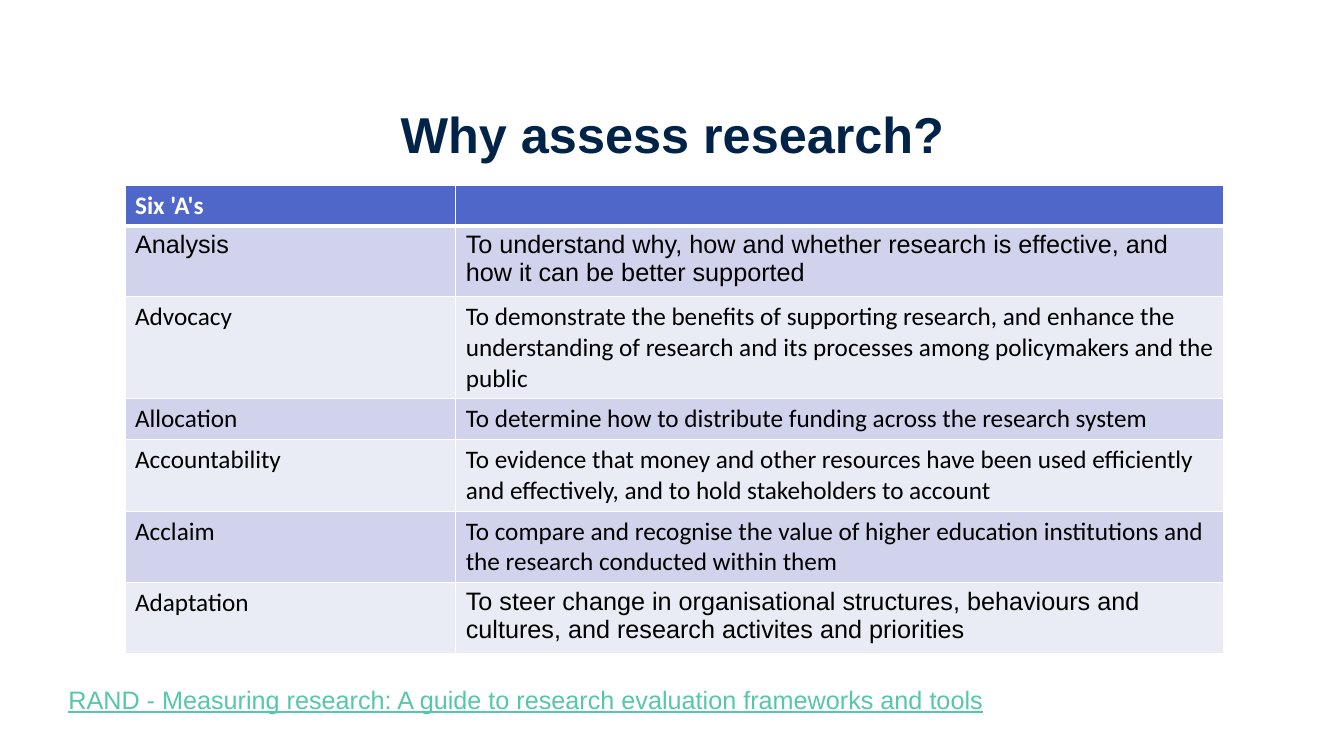
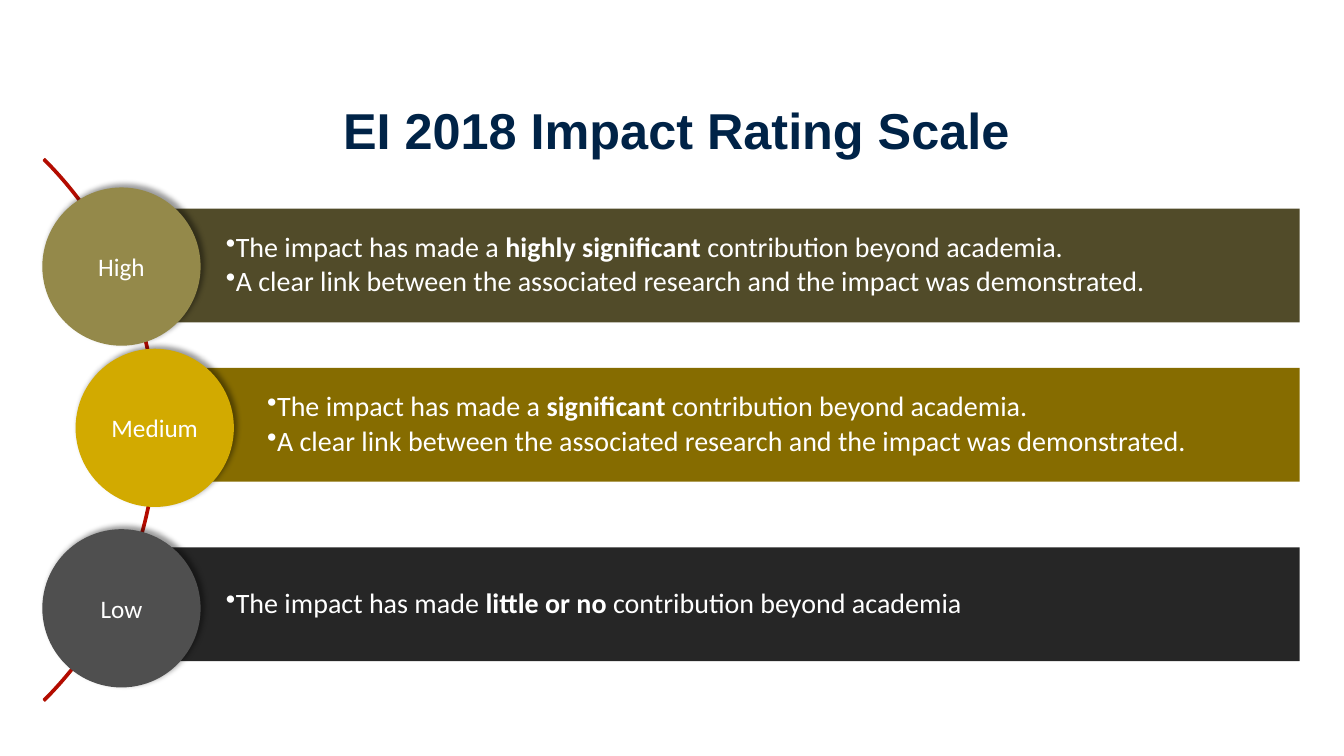
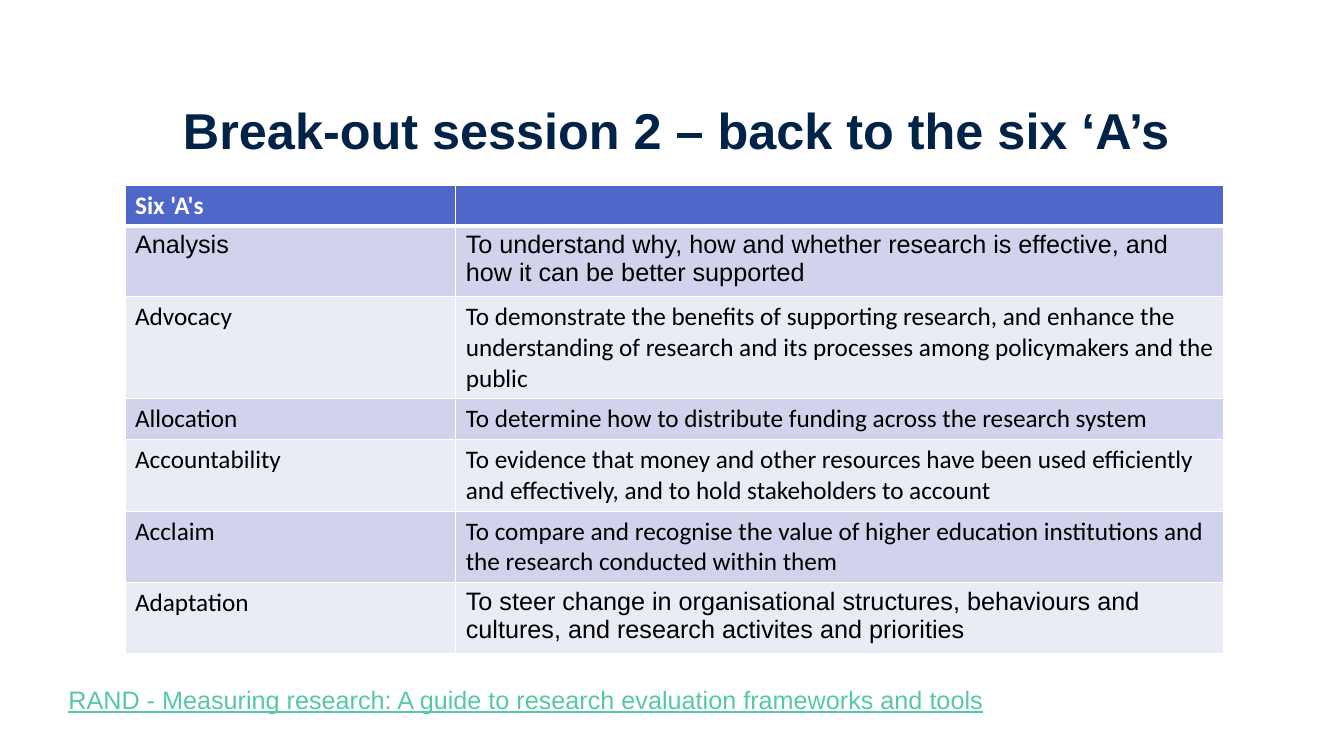
from lxml import etree
from pptx import Presentation
from pptx.dml.color import RGBColor
from pptx.enum.shapes import MSO_SHAPE
from pptx.enum.text import MSO_ANCHOR, PP_ALIGN
from pptx.oxml import parse_xml
from pptx.oxml.ns import nsdecls, qn
from pptx.util import Inches, Pt

CENTER = PP_ALIGN.CENTER
MIDDLE = MSO_ANCHOR.MIDDLE
RECTANGLE, OVAL, ARC = MSO_SHAPE.RECTANGLE, MSO_SHAPE.OVAL, MSO_SHAPE.BLOCK_ARC

WIDTH, HEIGHT = 13.33, 7.5
NAVY, WHITE, BLACK, LINK = "002347", "FFFFFF", "000000", "56C7AA"
HEADER, ROW_FILLS = "4E67C8", ("D0D3EB", "E9EBF5")
ARC_FILL, ARC_LINE = "C00000", "B01001"

SOURCE = "RAND - Measuring research: A guide to research evaluation frameworks and tools"
TABLE_TITLES = ("Why assess research?", "Break-out session 2 – back to the six ‘A’s")
SCALE_TITLE = "EI 2018 Impact Rating Scale"

COLUMNS = (3.28, 7.62)
HEADER_HEIGHT = 0.4
SIX_AS = [
    (0.66, "Analysis", "Arial", "Arial",
     "To understand why, how and whether research is effective, and how it can be better supported"),
    (1.01, "Advocacy", "Calibri", "Calibri",
     "To demonstrate the benefits of supporting research, and enhance the understanding "
     "of research and its processes among policymakers and the public"),
    (0.41, "Allocation", "Calibri", "Calibri",
     "To determine how to distribute funding across the research system"),
    (0.71, "Accountability", "Calibri", "Calibri",
     "To evidence that money and other resources have been used efficiently and effectively, "
     "and to hold stakeholders to account"),
    (0.71, "Acclaim", "Calibri", "Calibri",
     "To compare and recognise the value of higher education institutions "
     "and the research conducted within them"),
    (0.65, "Adaptation", "Calibri", "Arial",
     "To steer change in organisational structures, behaviours and cultures, "
     "and research activites and priorities"),
]

CLEAR_LINK = ("A clear link between the associated research and the impact was demonstrated.",)
RATINGS = [
    ("High", "94894A", "514B29", (0.42, 1.86), (1.34, 2.07),
     [("The impact has made a ", "highly significant ", "contribution beyond academia."), CLEAR_LINK]),
    ("Medium", "D2AA00", "866C00", (0.75, 3.46), (1.75, 3.65),
     [("The impact has made a ", "significant", " contribution beyond academia."), CLEAR_LINK]),
    ("Low", "4F4F4F", "262626", (0.42, 5.25), (1.34, 5.43),
     [("The impact has made ", "little or no ", "contribution beyond academia")]),
]
BAND_RIGHT, BAND_HEIGHT, CIRCLE = 12.89, 1.13, 1.57


def color(value):
    return RGBColor.from_string(value)


def add_span(para, text, size, font, ink, bold=False, underline=False):
    span = para.add_run()
    span.text = text
    span.font.size = Pt(size)
    span.font.name = font
    span.font.color.rgb = color(ink)
    span.font.bold = bold
    span.font.underline = underline


def add_text(page, place, text, size, ink, align=None, **style):
    box = page.shapes.add_textbox(*map(Inches, place))
    frame = box.text_frame
    frame.word_wrap = True
    frame.vertical_anchor = MIDDLE
    para = frame.paragraphs[0]
    para.alignment = align
    para.line_spacing = 0.9
    add_span(para, text, size, "Arial", ink, **style)


def add_page(deck, title, left=1.25, top=1):
    page = deck.slides.add_slide(deck.slide_layouts[6])
    add_text(page, (left, top, 10.92, 0.65), title, 36, NAVY, CENTER, bold=True)
    return page


def add_shape(page, kind, place, fill):
    shape = page.shapes.add_shape(kind, *map(Inches, place))
    shape.shadow.inherit = False
    shape.fill.solid()
    shape.fill.fore_color.rgb = color(fill)
    shape.line.fill.background()
    return shape


def add_borders(cell, bottom, top):
    properties = cell._tc.get_or_add_tcPr()
    for side, points in (("L", 1), ("R", 1), ("T", top), ("B", bottom)):
        properties.append(parse_xml(
            f'<a:ln{side} {nsdecls("a")} w="{Pt(points)}"><a:solidFill>'
            f'<a:srgbClr val="{WHITE}"/></a:solidFill></a:ln{side}>'))


def fill_cell(cell, text, font, ink, fill, bold=False, bottom=1, top=1):
    add_borders(cell, bottom, top)
    cell.fill.solid()
    cell.fill.fore_color.rgb = color(fill)
    if text:
        add_span(cell.text_frame.paragraphs[0], text, 18, font, ink, bold)


def add_six_as(page):
    heights = [HEADER_HEIGHT] + [row[0] for row in SIX_AS]
    place = (1.24, 1.84, sum(COLUMNS), sum(heights))
    table = page.shapes.add_table(len(heights), len(COLUMNS), *map(Inches, place)).table
    for column, width in zip(table.columns, COLUMNS):
        column.width = Inches(width)
    for row, height in zip(table.rows, heights):
        row.height = Inches(height)
    for index, text in enumerate(("Six 'A's", "")):
        fill_cell(table.cell(0, index), text, "Calibri", WHITE, HEADER, bold=True, bottom=3)
    for number, (_, name, name_font, aim_font, aim) in enumerate(SIX_AS, 1):
        fill = ROW_FILLS[(number - 1) % 2]
        top = 3 if number == 1 else 1
        fill_cell(table.cell(number, 0), name, name_font, BLACK, fill, top=top)
        fill_cell(table.cell(number, 1), aim, aim_font, BLACK, fill, top=top)


def add_band(page, left, top, fill, lines):
    band = add_shape(page, RECTANGLE, (left, top, BAND_RIGHT - left, BAND_HEIGHT), fill)
    frame = band.text_frame
    frame.word_wrap = True
    frame.vertical_anchor = MIDDLE
    frame.margin_left = Inches(0.9)
    frame.margin_top = frame.margin_right = frame.margin_bottom = Inches(0.04)
    for index, parts in enumerate(lines):
        para = frame.add_paragraph() if index else frame.paragraphs[0]
        para.alignment = PP_ALIGN.LEFT
        para.line_spacing = 0.9
        para.space_after = Pt(3)
        properties = para._p.get_or_add_pPr()
        properties.set("marL", str(Inches(0.06)))
        properties.set("indent", str(-Inches(0.06)))
        etree.SubElement(properties, qn("a:buChar")).set("char", "•")
        for position, text in enumerate(parts):
            add_span(para, text, 20, "Calibri", WHITE, bold=position == 1)


def add_circle(page, left, top, fill, label):
    circle = add_shape(page, OVAL, (left, top, CIRCLE, CIRCLE), fill)
    effects = circle._element.spPr.find(qn("a:effectLst"))
    effects.append(parse_xml(
        f'<a:outerShdw {nsdecls("a")} blurRad="{Pt(4)}" dist="{Pt(3)}" dir="{315 * 60000}" '
        f'rotWithShape="0"><a:srgbClr val="{BLACK}"><a:alpha val="40000"/></a:srgbClr></a:outerShdw>'))
    frame = circle.text_frame
    frame.vertical_anchor = MIDDLE
    frame.margin_left = frame.margin_right = 0
    para = frame.paragraphs[0]
    para.alignment = CENTER
    add_span(para, label, 18, "Calibri", WHITE)


def add_table_page(deck, title, **title_place):
    page = add_page(deck, title, **title_place)
    add_six_as(page)
    add_text(page, (0.58, 6.63, 11.97, 0.65), SOURCE, 18, LINK, underline=True)


def add_scale_page(deck):
    page = add_page(deck, SCALE_TITLE)
    arc = add_shape(page, ARC, (-6.05, 0.46, 7.61, 7.61), ARC_FILL)
    for index, value in enumerate((189, 27, 0.003)):
        arc.adjustments[index] = value
    arc.line.color.rgb = color(ARC_LINE)
    arc.line.width = Pt(1)
    for label, circle_fill, band_fill, circle_at, band_at, lines in RATINGS:
        add_band(page, *band_at, band_fill, lines)
        add_circle(page, *circle_at, circle_fill, label)


def main():
    deck = Presentation()
    deck.slide_width, deck.slide_height = Inches(WIDTH), Inches(HEIGHT)
    add_table_page(deck, TABLE_TITLES[0], left=1.21, top=1.04)
    add_scale_page(deck)
    add_table_page(deck, TABLE_TITLES[1])
    deck.save("out.pptx")


if __name__ == "__main__":
    main()
